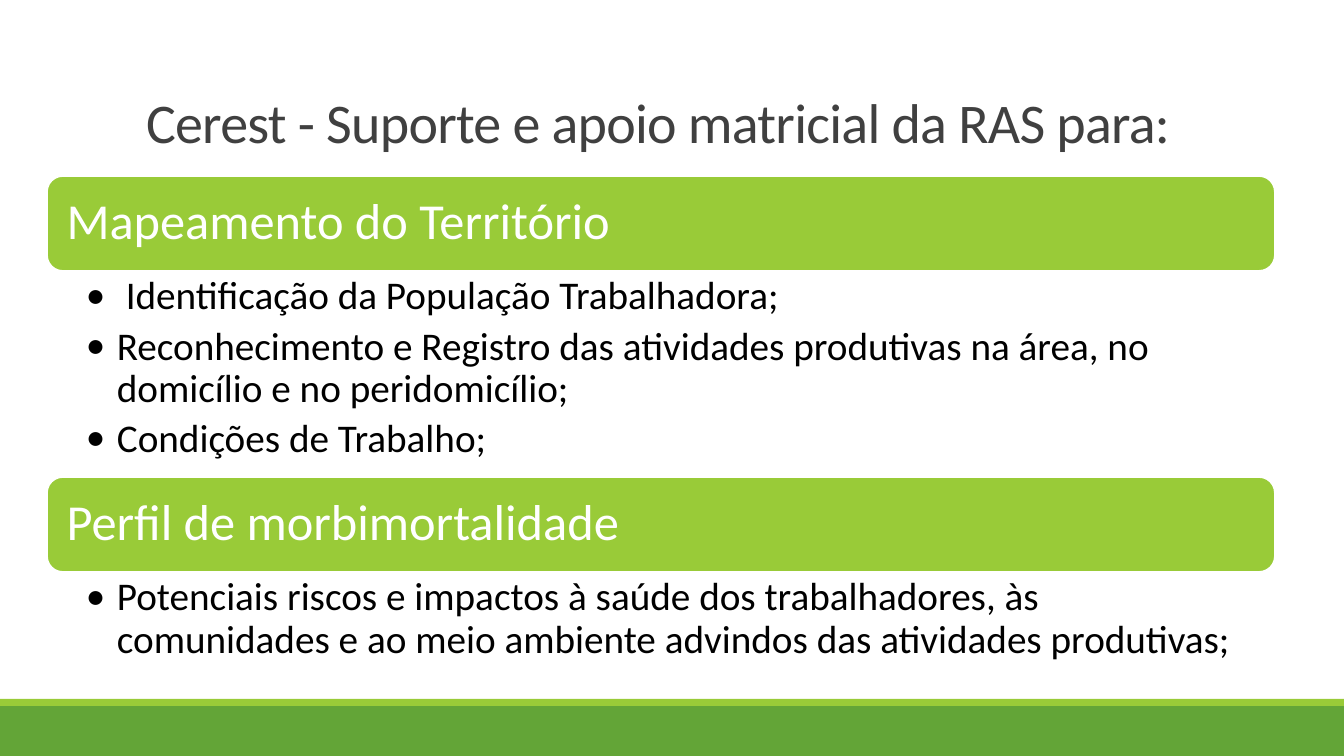
from lxml.etree import SubElement
from pptx import Presentation
from pptx.dml.color import RGBColor
from pptx.enum.shapes import MSO_SHAPE
from pptx.enum.text import MSO_ANCHOR, PP_ALIGN
from pptx.oxml.ns import qn
from pptx.util import Pt

PX = 914400 / 100.8
WIDE, HIGH = 1344, 756
COLORS = {"green": "63A537", "lime": "99CB38", "white": "FFFFFF",
          "gray": "404040", "black": "000000"}
TOPICS = [
    (176, 206, "Mapeamento do Território", [
        " Identificação da População Trabalhadora;",
        "Reconhecimento e Registro das atividades produtivas na área, "
        "no domicílio e no peridomicílio;",
        "Condições de Trabalho;"]),
    (477, 97, "Perfil de morbimortalidade", [
        "Potenciais riscos e impactos à saúde dos trabalhadores, às "
        "comunidades e ao meio ambiente advindos das atividades produtivas;"]),
]
LEFT, SPAN, BAR = 47, 1228, 95


def add_block(kind, box, fill=None):
    """Add a filled shape, or a text box when kind is None."""
    box = [round(n * PX) for n in box]
    if kind is None:
        return slide.shapes.add_textbox(*box)
    shape = slide.shapes.add_shape(kind, *box)
    shape.shadow.inherit = False
    shape.fill.solid()
    shape.fill.fore_color.rgb = RGBColor.from_string(COLORS[fill])
    shape.line.fill.background()
    return shape


def set_text(shape, lines, size, color, anchor, pads, spacing, after=0, bullet=False):
    frame = shape.text_frame
    frame.word_wrap = True
    frame.vertical_anchor = anchor
    for side, pad in zip(("left", "top", "right", "bottom"), pads):
        setattr(frame, f"margin_{side}", round(pad * PX))
    for i, line in enumerate(lines):
        para = frame.paragraphs[0] if i == 0 else frame.add_paragraph()
        form = {"alignment": PP_ALIGN.LEFT, "line_spacing": spacing,
                "space_after": Pt(after)}
        for name, value in form.items():
            setattr(para, name, value)
        if bullet:
            props = para._p.get_or_add_pPr()
            props.set("marL", str(round(31 * PX)))
            props.set("indent", str(round(-31 * PX)))
            SubElement(props, qn("a:buFont"), typeface="Calibri")
            SubElement(props, qn("a:buChar"), char="•")
        run = para.add_run()
        run.text = line
        for name, value in {"name": "Calibri", "size": Pt(size)}.items():
            setattr(run.font, name, value)
        run.font.color.rgb = RGBColor.from_string(COLORS[color])


deck = Presentation()
deck.slide_width, deck.slide_height = round(WIDE * PX), round(HIGH * PX)
slide = deck.slides.add_slide(deck.slide_layouts[6])

add_block(MSO_SHAPE.RECTANGLE, (0, 706, WIDE, 50), "green")
add_block(MSO_SHAPE.RECTANGLE, (0, 699, WIDE, 7), "lime")

title = add_block(None, (136, 0, 1109, 160))
set_text(title, ["Cerest - Suporte e apoio matricial da RAS para:"], 40, "gray",
         MSO_ANCHOR.BOTTOM, (10, 5, 10, 5), 0.85)
title.text_frame.paragraphs[0].runs[0].font._element.set("spc", "-50")

for top, depth, head, points in TOPICS:
    bar = add_block(MSO_SHAPE.ROUNDED_RECTANGLE, (LEFT, top, SPAN, BAR), "lime")
    bar.line.color.rgb = RGBColor.from_string(COLORS["white"])
    bar.line.width = Pt(1.25)
    set_text(bar, [head], 36, "white", MSO_ANCHOR.MIDDLE, (15, 15, 15, 15), 0.9)
    body = add_block(None, (LEFT, top + BAR, SPAN, depth))
    set_text(body, points, 28, "black", MSO_ANCHOR.TOP, (39, 5, 28, 5), 0.9, 5.6, True)

deck.save("out.pptx")
